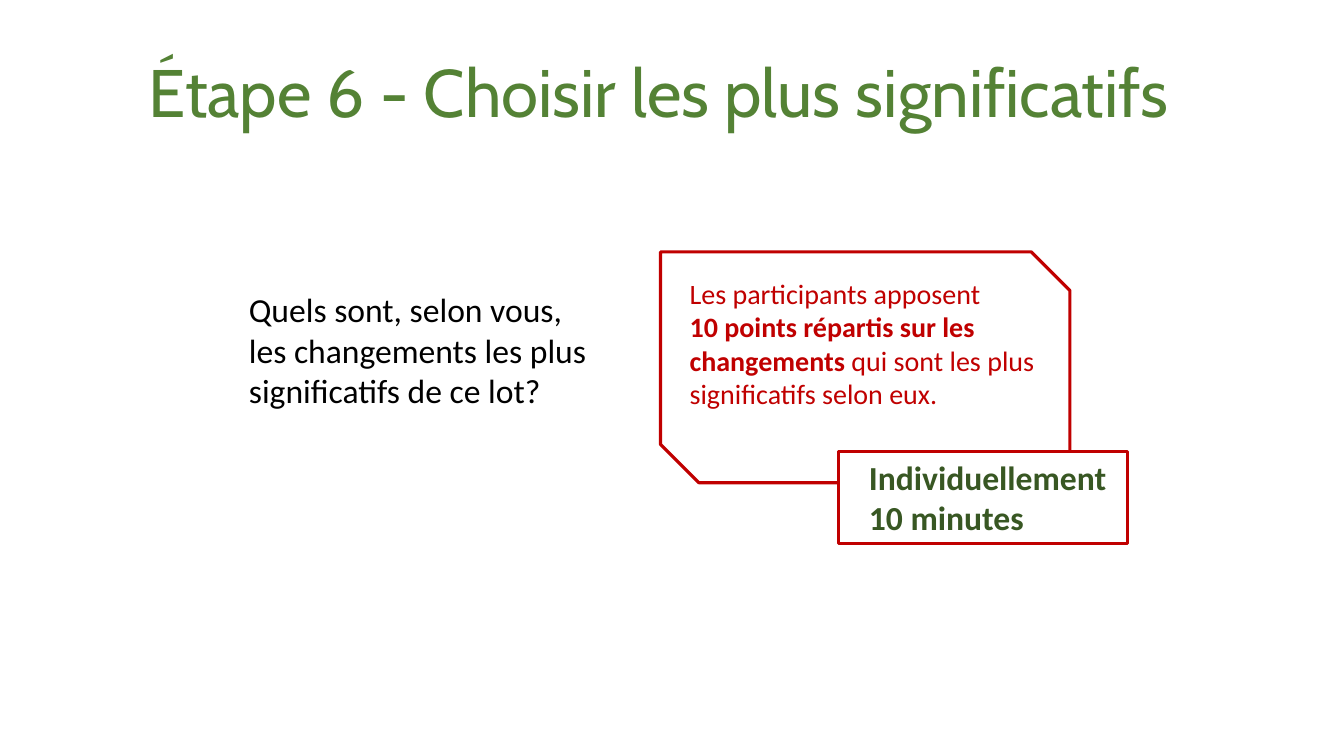
"""Build the slide on choosing the most significant changes."""
import dataclasses
import typing

import pptx
import pptx.dml.color
import pptx.enum.shapes
import pptx.enum.text
import pptx.util

COLORS = {"title": "548235", "question": "000000", "task": "C00000",
          "timing": "385723", "paper": "FFFFFF"}
SLIDE_WIDTH = pptx.util.Inches(13.33)
SLIDE_HEIGHT = pptx.util.Inches(7.5)
COLUMN = SLIDE_WIDTH / 100
ROW = SLIDE_HEIGHT / 100


@dataclasses.dataclass(frozen=True)
class Area:
    """Hold a place in columns and rows, each a hundredth of the slide."""
    left: float
    top: float
    width: float
    height: float

    def lengths(self) -> list[int]:
        """Return left, top, width and height as slide lengths."""
        units = (COLUMN, ROW, COLUMN, ROW)
        return [round(share * unit) for share, unit in zip(dataclasses.astuple(self), units)]


@dataclasses.dataclass(frozen=True)
class Span:
    """Hold a stretch of text of one weight."""
    text: str
    bold: bool = False


@dataclasses.dataclass(frozen=True)
class Panel:
    """Describe an outlined shape and its text."""
    outline: pptx.enum.shapes.MSO_SHAPE
    area: Area
    paragraphs: list[list[Span]]
    size: int
    color: str
    indent: float = 0
    fill: typing.Optional[str] = None


TITLE_AREA = Area(3, 6, 93.17, 12.13)
QUESTION_AREA = Area(17.78, 37.6, 28.58, 22.93)
PANELS = [
    Panel(pptx.enum.shapes.MSO_SHAPE.SNIP_2_DIAG_RECTANGLE,
          Area(49.14, 33.33, 30.46, 30.53),
          [[Span("Les participants apposent \n"),
            Span("10 points répartis sur les changements ", bold=True),
            Span("qui sont les plus significatifs selon eux.")]],
          size=20, color="task"),
    Panel(pptx.enum.shapes.MSO_SHAPE.RECTANGLE,
          Area(62.42, 59.73, 21.46, 12.13),
          [[Span("Individuellement", bold=True)], [Span("10 minutes", bold=True)]],
          size=24, color="timing", indent=0.2, fill="paper"),
]


def rgb(name: str) -> pptx.dml.color.RGBColor:
    """Look up a named colour."""
    return pptx.dml.color.RGBColor.from_string(COLORS[name])


def write(box: typing.Any, paragraphs: list[list[Span]], *, size: int, color: str,
          font: str = "Calibri", indent: float = 0, spacing: float = 1,
          align: pptx.enum.text.PP_ALIGN = pptx.enum.text.PP_ALIGN.LEFT,
          anchor: pptx.enum.text.MSO_ANCHOR = pptx.enum.text.MSO_ANCHOR.TOP) -> None:
    """Fill a box with formatted paragraphs."""
    frame = box.text_frame
    frame.word_wrap = True
    frame.auto_size = pptx.enum.text.MSO_AUTO_SIZE.NONE
    frame.vertical_anchor = anchor
    for number, spans in enumerate(paragraphs):
        para = frame.add_paragraph() if number else frame.paragraphs[0]
        para.alignment = align
        para.line_spacing = spacing
        if indent:
            para._p.get_or_add_pPr().set("marL", str(pptx.util.Inches(indent)))
        for span in spans:
            for line_number, line in enumerate(span.text.split("\n")):
                if line_number:
                    para.add_line_break()
                if line:
                    run = para.add_run()
                    run.text = line
                    run.font.name = font
                    run.font.size = pptx.util.Pt(size)
                    run.font.bold = span.bold
                    run.font.color.rgb = rgb(color)


def draw_panel(page: typing.Any, panel: Panel) -> None:
    """Draw one outlined panel."""
    shape = page.shapes.add_shape(panel.outline, *panel.area.lengths())
    shape.shadow.inherit = False
    shape.line.color.rgb = rgb("task")
    shape.line.width = pptx.util.Pt(2.25)
    if panel.fill:
        shape.fill.solid()
        shape.fill.fore_color.rgb = rgb(panel.fill)
    else:
        shape.fill.background()
    write(shape, panel.paragraphs, size=panel.size, color=panel.color, indent=panel.indent)


def main() -> None:
    """Create and save the deck."""
    deck = pptx.Presentation()
    deck.slide_width = SLIDE_WIDTH
    deck.slide_height = SLIDE_HEIGHT
    page = deck.slides.add_slide(deck.slide_layouts.get_by_name("Title Only"))
    title = page.shapes.title
    title.left, title.top, title.width, title.height = TITLE_AREA.lengths()
    write(title, [[Span("Étape 6 - Choisir les plus significatifs ")]],
          size=48, color="title", font="Cabin", spacing=0.9,
          align=pptx.enum.text.PP_ALIGN.CENTER, anchor=pptx.enum.text.MSO_ANCHOR.BOTTOM)
    question = page.shapes.add_textbox(*QUESTION_AREA.lengths())
    write(question, [[Span("Quels sont, selon vous, \n"
                           "les changements les plus significatifs de ce lot?")]],
          size=24, color="question")
    for panel in PANELS:
        draw_panel(page, panel)
    deck.save("out.pptx")


if __name__ == "__main__":
    main()
